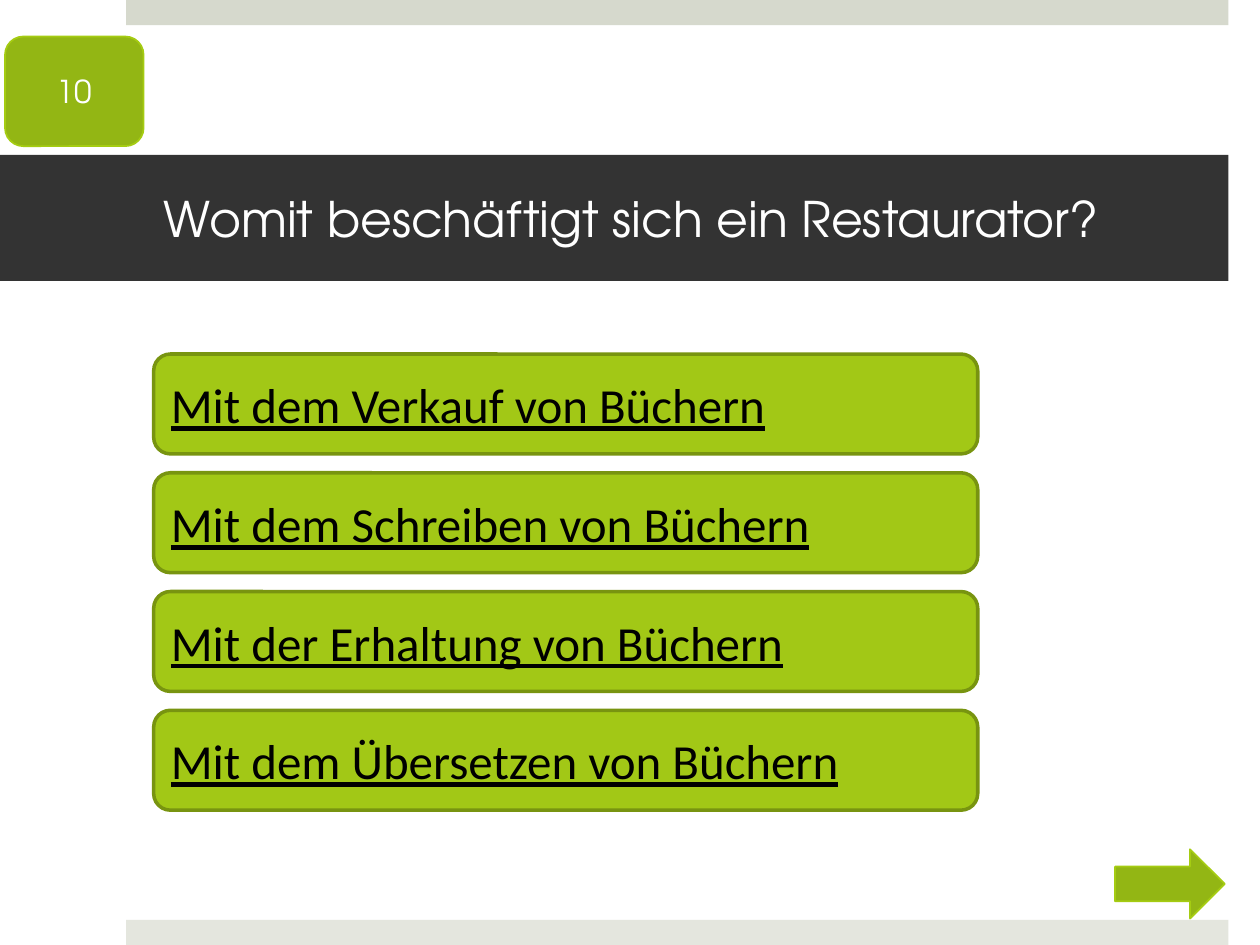
import dataclasses

import lxml.etree
import pptx
import pptx.dml.color
import pptx.enum.shapes
import pptx.enum.text
import pptx.oxml.ns
import pptx.util

SHAPES = pptx.enum.shapes.MSO_SHAPE
ALIGN = pptx.enum.text.PP_ALIGN
COLUMN = pptx.util.Inches(10) / 100
ROW = pptx.util.Inches(7.5) / 75


@dataclasses.dataclass(frozen=True)
class Theme:
    """Colours, fonts and type sizes of the quiz slide."""

    top_strip: str = "D6D9CD"
    bottom_strip: str = "E4E6DE"
    title_band: str = "333333"
    answer_fill: str = "A2C816"
    answer_line: str = "789410"
    accent_fill: str = "93B614"
    accent_line: str = "A5CC12"
    light_text: str = "FFFFFF"
    dark_text: str = "000000"
    heading_font: str = "TeX Gyre Adventor"
    body_font: str = "Calibri"
    large: int = 28
    small: int = 18


@dataclasses.dataclass(frozen=True)
class Box:
    """A region in columns and rows of the slide grid."""

    left: float
    top: float
    width: float
    height: float

    def lengths(self):
        """Return left, top, width and height in slide units."""
        return (round(self.left * COLUMN), round(self.top * ROW),
                round(self.width * COLUMN), round(self.height * ROW))

    def rows(self, count, gap):
        """Split the box into equal rows with a gap between them."""
        height = (self.height - gap * (count - 1)) / count
        return [Box(self.left, self.top + index * (height + gap), self.width, height)
                for index in range(count)]


THEME = Theme()


def colour(value):
    """Turn a hexadecimal string into a colour."""
    return pptx.dml.color.RGBColor.from_string(value)


def add_panel(slide, kind, box, fill, line=None, weight=1):
    """Add a flat preset shape, outlined only when a line colour is given."""
    shape = slide.shapes.add_shape(kind, *box.lengths())
    shape.shadow.inherit = False
    shape.fill.solid()
    shape.fill.fore_color.rgb = colour(fill)
    if line:
        shape.line.color.rgb = colour(line)
        shape.line.width = pptx.util.Pt(weight)
    else:
        shape.line.fill.background()
    return shape


def write(shape, text, alignment, font_name, size, text_colour):
    """Write one vertically centred paragraph and return it."""
    frame = shape.text_frame
    frame.text = text
    frame.word_wrap = True
    frame.vertical_anchor = pptx.enum.text.MSO_ANCHOR.MIDDLE
    paragraph = frame.paragraphs[0]
    paragraph.alignment = alignment
    paragraph.font.name = font_name
    paragraph.font.size = pptx.util.Pt(size)
    paragraph.font.color.rgb = colour(text_colour)
    return paragraph


def add_title(slide, box, text):
    """Place the title placeholder as a dark band across the slide."""
    title = slide.shapes.title
    title.left, title.top, title.width, title.height = box.lengths()
    title.fill.solid()
    title.fill.fore_color.rgb = colour(THEME.title_band)
    write(title, text, ALIGN.LEFT, THEME.heading_font, THEME.large, THEME.light_text)
    frame = title.text_frame
    frame.auto_size = pptx.enum.text.MSO_AUTO_SIZE.NONE
    frame.margin_left = round(13 * COLUMN)
    frame.margin_right = round(3 * COLUMN)


def add_answers(slide, box, answers):
    """Stack one underlined answer button per row of the box."""
    for row, answer in zip(box.rows(len(answers), gap=1.5), answers):
        button = add_panel(slide, SHAPES.ROUNDED_RECTANGLE, row,
                           THEME.answer_fill, THEME.answer_line, 2)
        paragraph = write(button, answer, ALIGN.LEFT, THEME.body_font,
                          THEME.large, THEME.dark_text)
        paragraph.font.underline = True
        properties = paragraph._p.get_or_add_pPr()
        indent = round(3.8 * COLUMN)
        properties.set("marL", str(indent))
        properties.set("indent", str(-indent))
        properties.insert(0, lxml.etree.Element(pptx.oxml.ns.qn("a:buNone")))


def add_number(slide, box, number):
    """Place the slide number on a rounded tile."""
    tile = add_panel(slide, SHAPES.ROUNDED_RECTANGLE, box,
                     THEME.accent_fill, THEME.accent_line)
    write(tile, number, ALIGN.CENTER, THEME.heading_font, THEME.small, THEME.light_text)


def build_question(slide):
    """Place all regions of the question slide."""
    add_panel(slide, SHAPES.RECTANGLE, Box(10, 0, 87.5, 2), THEME.top_strip)
    add_panel(slide, SHAPES.RECTANGLE, Box(10, 73, 87.5, 2), THEME.bottom_strip)
    add_title(slide, Box(0, 12.3, 97.5, 10), "Womit beschäftigt sich ein Restaurator?")
    add_answers(slide, Box(12.2, 28.1, 65.4, 36.2), [
        "Mit dem Verkauf von Büchern",
        "Mit dem Schreiben von Büchern",
        "Mit der Erhaltung von Büchern",
        "Mit dem Übersetzen von Büchern",
    ])
    add_number(slide, Box(0.4, 2.9, 11, 8.7), "10")
    add_panel(slide, SHAPES.RIGHT_ARROW, Box(88.5, 67.4, 8.7, 5.5),
              THEME.accent_fill, THEME.accent_line)


def main():
    """Build and save the presentation."""
    presentation = pptx.Presentation()
    presentation.slide_width = round(100 * COLUMN)
    presentation.slide_height = round(75 * ROW)
    build_question(presentation.slides.add_slide(presentation.slide_layouts[5]))
    presentation.save("out.pptx")


if __name__ == "__main__":
    main()
